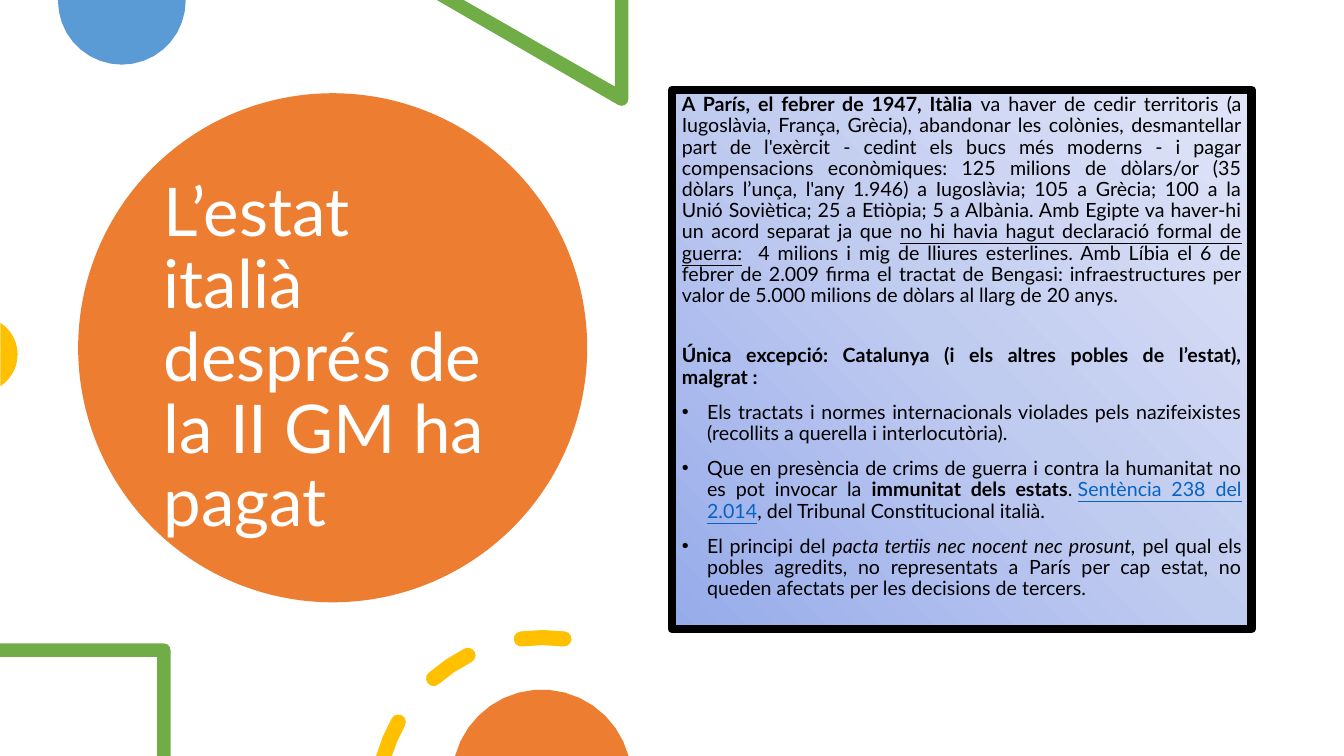
from dataclasses import dataclass
from math import ceil, cos, radians, sin

from pptx import Presentation
from pptx.dml.color import RGBColor
from pptx.enum.shapes import MSO_SHAPE
from pptx.enum.text import MSO_ANCHOR, PP_ALIGN
from pptx.oxml import parse_xml
from pptx.oxml.ns import nsdecls, qn
from pptx.util import Emu, Inches, Pt

Point = tuple[float, float]
Contour = list[Point]


# Theme: colours, font and type sizes
@dataclass(frozen=True)
class Theme:
    orange: str = "ED7D31"
    blue: str = "5B9BD5"
    green: str = "70AD47"
    yellow: str = "FFC000"
    black: str = "000000"
    white: str = "FFFFFF"
    link: str = "0563C1"
    panel: tuple[str, ...] = ("96ABEA", "C0CBF0", "E0E5F7")
    font: str = "Lato"
    title: float = 48
    body: float = 14
    border: float = 6


@dataclass(frozen=True)
class Run:
    text: str
    bold: bool = False
    italic: bool = False
    underline: bool = False
    color: str = Theme.black


@dataclass(frozen=True)
class Para:
    runs: list[Run]
    bullet: bool = False
    after: float = 0


@dataclass(frozen=True)
class Outline:
    color: str
    contours: list[Contour]


T = Theme()
HARD_SPACE = chr(160)

# Grid: 16 columns by 9 rows of square cells
ROWS = 9
prs = Presentation()
prs.slide_width, prs.slide_height = Inches(13.333), Inches(7.5)
CELL = prs.slide_height / ROWS
slide = prs.slides.add_slide(prs.slide_layouts[6])


def cells(*values: float) -> list[Emu]:
    return [Emu(round(v * CELL)) for v in values]


def polar(cx: float, cy: float, r: float, angle: float) -> Point:
    return cx + r * cos(radians(angle)), cy + r * sin(radians(angle))


def arc(cx: float, cy: float, r: float, start: float, end: float,
        step: float = 10) -> Contour:
    """Points of a circular arc; degrees run clockwise from the right."""
    n = ceil(abs(end - start) / step)
    return [polar(cx, cy, r, start + (end - start) * i / n) for i in range(n + 1)]


def dash(start: float, end: float, cut: float = 0) -> Contour:
    """One dash of the ring; a cut dash ends flat on the slide's edge."""
    cx, cy, r, half = 6.46, 9.56, 1.97, 0.09

    def cap(angle: float, turn: float) -> Contour:
        x, y = polar(cx, cy, r, angle)
        return arc(x, y, half, angle + turn, angle + turn + 180, step=30)

    points = arc(cx, cy, r + half, start, end) + cap(end, 0)
    points += arc(cx, cy, r - half, end, start + cut)
    return points if cut else points + cap(start, 180)


def draw_outline(outline: Outline) -> None:
    fb = None
    for contour in outline.contours:
        first, *rest = [cells(*point) for point in contour]
        if fb is None:
            fb = slide.shapes.build_freeform(*first)
        else:
            fb.move_to(*first)
        fb.add_line_segments(rest, close=True)
    paint(fb.convert_to_shape(), outline.color)


def paint(s, color: str) -> None:
    s.fill.solid()
    s.fill.fore_color.rgb = RGBColor.from_string(color)
    s.line.fill.background()
    s.shadow.inherit = False


def add_text(p, text: str, *, size: float, color: str, bold: bool = False,
             italic: bool = False, underline: bool = False) -> None:
    r = p.add_run()
    r.text = text
    f = r.font
    f.name, f.size, f.color.rgb = T.font, Pt(size), RGBColor.from_string(color)
    f.bold, f.italic, f.underline = bold, italic, underline


def add_box(left: float, top: float, width: float, height: float,
            anchor: MSO_ANCHOR):
    s = slide.shapes.add_textbox(*cells(left, top, width, height))
    s.text_frame.word_wrap = True
    s.text_frame.vertical_anchor = anchor
    return s


def fill_panel(s) -> None:
    """Radial gradient that spreads from the lower left corner."""
    stops = "".join(
        f'<a:gs pos="{50000 * i}"><a:srgbClr val="{c}"/></a:gs>'
        for i, c in enumerate(T.panel))
    s.fill.background()
    pr = s.element.spPr
    pr.replace(pr.find(qn("a:noFill")), parse_xml(
        f'<a:gradFill {nsdecls("a")} rotWithShape="1"><a:gsLst>{stops}</a:gsLst>'
        '<a:path path="circle"><a:fillToRect t="100000" r="100000"/></a:path>'
        '</a:gradFill>'))
    s.line.color.rgb = RGBColor.from_string(T.black)
    s.line.width = Pt(T.border)


def add_para(p, para: Para) -> None:
    p.alignment, p.line_spacing = PP_ALIGN.JUSTIFY, 0.9
    p.space_before, p.space_after = Pt(10), Pt(para.after)
    if para.bullet:
        pPr = p._p.get_or_add_pPr()
        pPr.set("marL", str(Inches(0.25)))
        pPr.set("indent", str(-Inches(0.25)))
        pPr.append(parse_xml(f'<a:buFont {nsdecls("a")} typeface="Arial"/>'))
        pPr.append(parse_xml(f'<a:buChar {nsdecls("a")} char="•"/>'))
    for run in para.runs:
        add_text(p, run.text, size=T.body, color=run.color, bold=run.bold,
                 italic=run.italic, underline=run.underline)


OUTLINES = [
    Outline(T.blue, [arc(1.45, 0.01, 0.76, 0, 180) + [(0.69, 0), (2.21, 0)]]),
    Outline(T.green, [[(7.48, 0), (7.32, 0), (7.32, 1.03), (5.52, 0), (5.2, 0)]
                      + arc(7.4, 1.18, 0.08, 120, 0, step=30)]),
    Outline(T.yellow, [arc(-0.24, 4.22, 0.45, -57, 57)]),
    Outline(T.green, [[(0, 7.66), (0, 7.82), (1.87, 7.82), (1.87, 9), (2.03, 9)]
                      + arc(1.95, 7.74, 0.08, 0, -90, step=30)]),
    Outline(T.yellow, [dash(195.8, 209.3, cut=1.6), dash(228.8, 243.2),
                       dash(262.6, 277.4)]),
    Outline(T.orange, [arc(6.45, 9.28, 1.07, 195.2, 344.8)]),
]

BODY = [
    Para([
        Run("A París, el febrer de 1947, Itàlia ", bold=True),
        Run("va haver de cedir territoris (a Iugoslàvia, França, Grècia), abandonar "
            "les colònies, desmantellar part de l'exèrcit - cedint els bucs més "
            "moderns - i pagar compensacions econòmiques: 125 milions de dòlars/or "
            "(35 dòlars l’unça, l'any 1.946) a Iugoslàvia; 105 a Grècia; 100 a la "
            "Unió Soviètica; 25 a Etiòpia; 5 a Albània. Amb Egipte va haver-hi un "
            "acord separat ja que "),
        Run("no hi havia hagut declaració formal de guerra:", underline=True),
        Run("  4 milions i mig de lliures esterlines. Amb Líbia el 6 de febrer de "
            "2.009 firma el tractat de Bengasi: infraestructures per valor de 5.000 "
            "milions de dòlars al llarg de 20 anys."),
    ], after=18),
    Para([Run("Única excepció: Catalunya (i els altres pobles de l’estat), malgrat :",
              bold=True)]),
    Para([Run("Els tractats i normes internacionals violades pels nazifeixistes "
              "(recollits a querella i interlocutòria).")], bullet=True),
    Para([
        Run("Que en presència de crims de guerra i contra la humanitat no es pot "
            "invocar la "),
        Run("immunitat dels estats", bold=True),
        Run("." + HARD_SPACE),
        Run("Sentència 238 del 2.014", underline=True, color=T.link),
        Run(", del Tribunal Constitucional italià."),
    ], bullet=True),
    Para([
        Run("El principi del "),
        Run("pacta tertiis nec nocent nec prosunt,", italic=True),
        Run(" pel qual els pobles agredits, no representats a París per cap estat, "
            "no queden afectats per les decisions de tercers."),
    ], bullet=True),
]

# Title on its disc
paint(slide.shapes.add_shape(MSO_SHAPE.OVAL, *cells(0.93, 1.11, 6.06, 6.06)), T.orange)
p = add_box(1.83, 1.61, 4.25, 5.34, MSO_ANCHOR.MIDDLE).text_frame.paragraphs[0]
p.line_spacing = 0.9
add_text(p, "L’estat italià després de la II GM ha pagat", size=T.title, color=T.white)

# Decoration along the edges
for outline in OUTLINES:
    draw_outline(outline)

# Text panel
panel = add_box(8, 1.07, 6.9, 6.42, MSO_ANCHOR.TOP)
fill_panel(panel)
tf = panel.text_frame
for i, para in enumerate(BODY):
    add_para(tf.add_paragraph() if i else tf.paragraphs[0], para)

prs.save("out.pptx")
